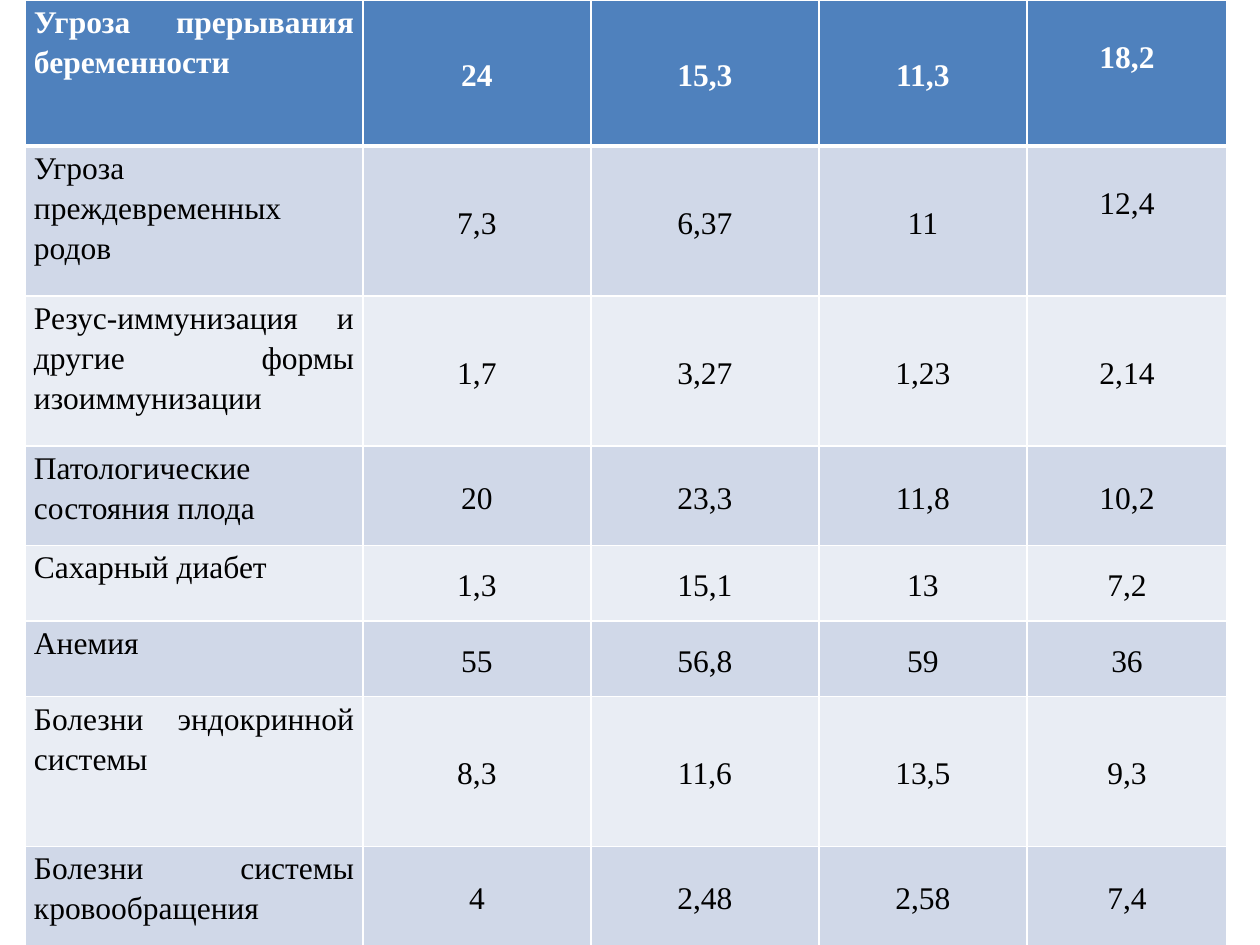
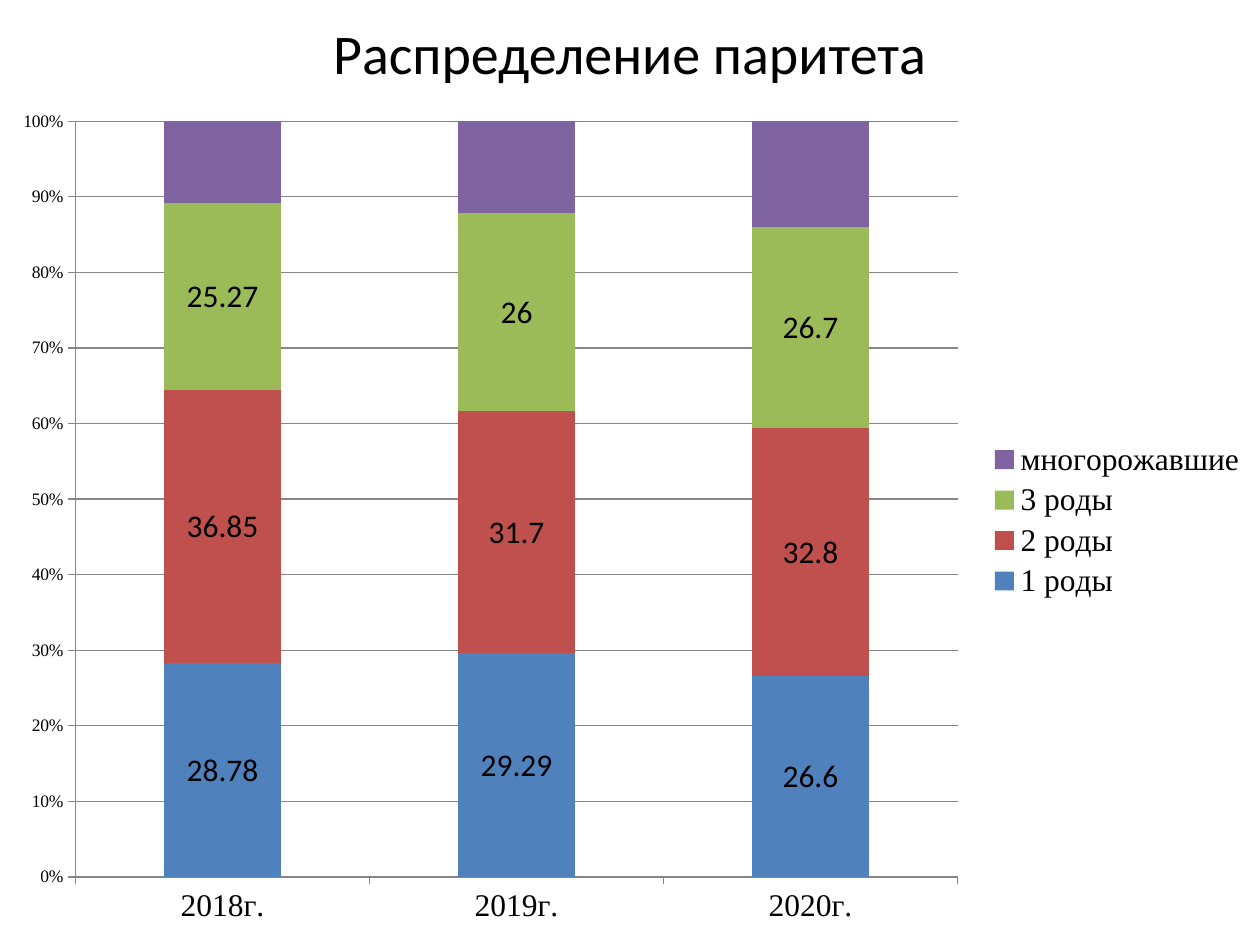
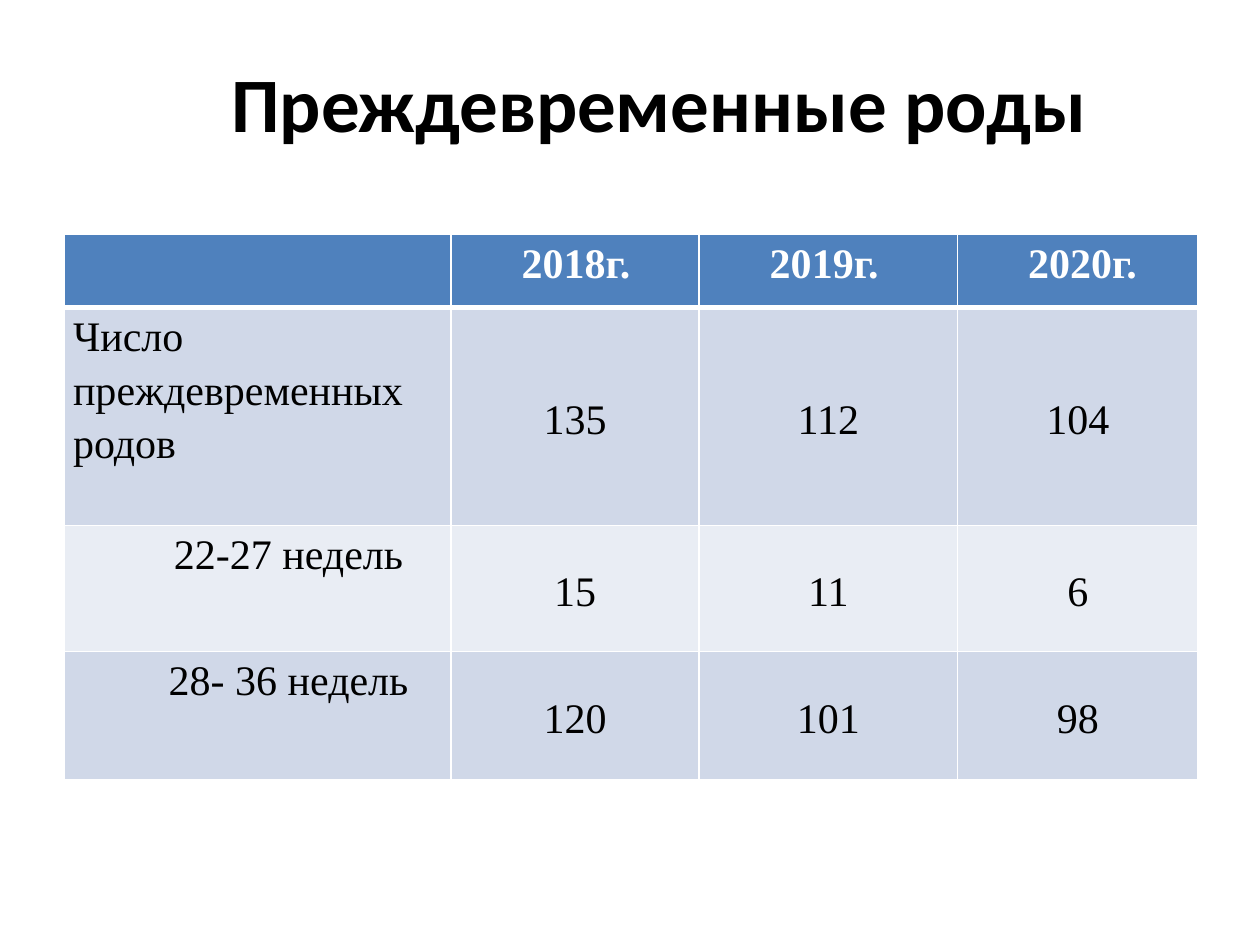
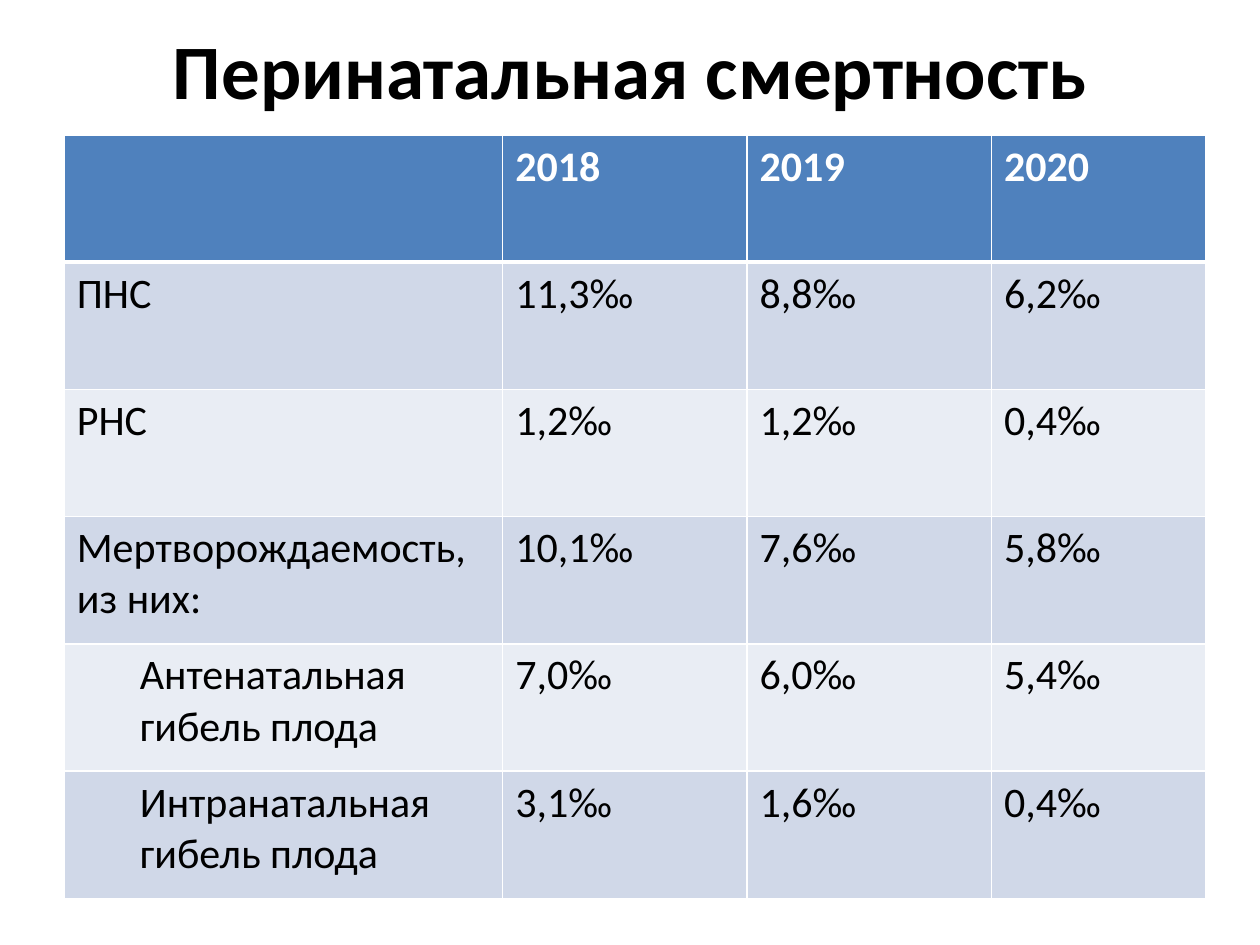
from lxml import etree
from pptx import Presentation
from pptx import util as u
from pptx.chart import data as cd
from pptx.dml.color import RGBColor
from pptx.enum import chart as ec, text as et
from pptx.oxml.ns import qn

Pt = u.Pt
SANS, SERIF = "Calibri", "Times New Roman"
WHITE, BLACK, GREY = "FFFFFF", "000000", "868686"
HEAD, BANDS = "4F81BD", ("D0D8E8", "E9EDF4")
HUES = ("4F81BD", "C0504D", "9BBB59", "8064A2")
LEFT, MID, JUST = et.PP_ALIGN.LEFT, et.PP_ALIGN.CENTER, et.PP_ALIGN.JUSTIFY
TOP, CORE = et.MSO_ANCHOR.TOP, et.MSO_ANCHOR.MIDDLE
FIRST = 35.28  # first-line indent of the serif tables


def hue(code):
    return RGBColor.from_string(code)


def style(font, face, size, code=BLACK, bold=False):
    font.name, font.size, font.bold = face, Pt(size), bold
    font.color.rgb = hue(code)


def title(slide, box, words, size=44, bold=True, foot=3.6):
    frame = slide.shapes.add_textbox(*map(Pt, box)).text_frame
    frame.word_wrap = True
    frame.vertical_anchor = CORE
    frame.margin_bottom = Pt(foot)
    frame.text = words
    line = frame.paragraphs[0]
    line.alignment = MID
    style(line.runs[0].font, SANS, size, bold=bold)


# Tables
def edge(cell, row):
    """White rules, with a heavy one under the header row."""
    props = cell._tc.get_or_add_tcPr()
    wide = {"lnT": row == 1, "lnB": row == 0}
    for side in ("lnL", "lnR", "lnT", "lnB"):
        rule = etree.SubElement(props, qn("a:" + side),
                                w=str(Pt(3 if wide.get(side) else 1)))
        fill = etree.SubElement(rule, qn("a:solidFill"))
        etree.SubElement(fill, qn("a:srgbClr"), val=WHITE)


def indent(cell, left=0, first=0):
    props = cell.text_frame.paragraphs[0]._p.get_or_add_pPr()
    props.set("marL", str(Pt(left)))
    props.set("indent", str(Pt(first)))


def place(cell, align, anchor=TOP):
    cell.vertical_anchor = anchor
    cell.text_frame.paragraphs[0].alignment = align


def grid(slide, spot, cols, rows, data, face, size):
    shape = slide.shapes.add_table(len(rows), len(cols), *map(
        Pt, (*spot, sum(cols), sum(rows))))
    table = shape.table
    table.horz_banding = False
    for col, width in zip(table.columns, cols):
        col.width = Pt(width)
    for r, (row, height) in enumerate(zip(table.rows, rows)):
        row.height = Pt(height)
        for cell, words in zip(row.cells, data[r]):
            edge(cell, r)
            cell.fill.solid()
            cell.fill.fore_color.rgb = hue(BANDS[(r - 1) % 2] if r else HEAD)
            cell.text_frame.text = words
            for run in cell.text_frame.paragraphs[0].runs:
                style(run.font, face, size, BLACK if r else WHITE, not r)
    return table


def tight(table, label):
    """Narrow insets, loose lines, centred figures beside the labels."""
    for row in table.rows:
        for c, cell in enumerate(row.cells):
            cell.margin_left = cell.margin_right = Pt(5.04)
            cell.margin_top = cell.margin_bottom = 0
            cell.text_frame.paragraphs[0].line_spacing = 1.15
            place(cell, *((MID, CORE) if c else (label, TOP)))


# Slide 1: complications
def risks(slide):
    data = [
        ("Угроза прерывания беременности", "24", "15,3", "11,3", "18,2"),
        ("Угроза преждевременных родов", "7,3", "6,37", "11", "12,4"),
        ("Резус-иммунизация и другие формы изоиммунизации",
         "1,7", "3,27", "1,23", "2,14"),
        ("Патологические состояния плода", "20", "23,3", "11,8", "10,2"),
        ("Сахарный диабет", "1,3", "15,1", "13", "7,2"),
        ("Анемия", "55", "56,8", "59", "36"),
        ("Болезни эндокринной системы", "8,3", "11,6", "13,5", "9,3"),
        ("Болезни системы кровообращения", "4", "2,48", "2,58", "7,4"),
    ]
    tall, mean, low = 85.68, 56.88, 43.2
    table = grid(slide, (14.4, 0), (192.96, 130.32, 130.32, 118.8, 114.48),
                 (83.52, tall, tall, mean, low, low, tall, mean),
                 data, SERIF, 18)
    tight(table, JUST)
    # The last figure of the first two rows sits one line down
    for r in range(2):
        cell = table.cell(r, 4)
        place(cell, MID)
        cell.margin_top = Pt(20)


# Slide 2: parity chart
def frame_plot(chart, box):
    area = chart.element.find(".//" + qn("c:plotArea"))
    for old in area.findall(qn("c:layout")):
        area.remove(old)
    layout = etree.Element(qn("c:layout"))
    area.insert(0, layout)
    manual = etree.SubElement(layout, qn("c:manualLayout"))
    pairs = [("layoutTarget", "inner"), ("xMode", "edge"), ("yMode", "edge"),
             *zip("xywh", box)]
    for tag, val in pairs:
        etree.SubElement(manual, qn("c:" + tag), val=str(val))


def births(slide):
    title(slide, (36, 21.6, 648, 49.68), "Распределение паритета",
          32, False, foot=37)
    data = cd.CategoryChartData()
    data.categories = ["2018г.", "2019г.", "2020г."]
    data.add_series("1 роды", (28.78, 29.29, 26.6))
    data.add_series("2 роды", (36.85, 31.7, 32.8))
    data.add_series("3 роды", (25.27, 26, 26.7))
    data.add_series("многорожавшие", (11, 12, 14))
    chart = slide.shapes.add_chart(
        ec.XL_CHART_TYPE.COLUMN_STACKED_100,
        *map(Pt, (0, 54.72, 720, 485.28)), data).chart
    style(chart.font, SANS, 10)
    chart.has_title = False
    frame_plot(chart, (0.06, 0.03, 0.7, 0.89))

    # Columns and their values
    plot = chart.plots[0]
    plot.vary_by_categories = False
    plot.overlap, plot.gap_width = 100, 150
    for i, (part, code) in enumerate(zip(plot.series, HUES)):
        part.format.fill.solid()
        part.format.fill.fore_color.rgb = hue(code)
        if i < 3:
            part.data_labels.show_value = True
            style(part.data_labels.font, SANS, 18)

    # Axes and legend
    for axis, size in ((chart.category_axis, 18), (chart.value_axis, 10)):
        style(axis.tick_labels.font, SERIF, size)
        axis.major_tick_mark = ec.XL_TICK_MARK.OUTSIDE
        axis.format.line.color.rgb = hue(GREY)
    axis = chart.value_axis
    axis.has_major_gridlines = True
    axis.major_gridlines.format.line.color.rgb = hue(GREY)
    axis.tick_labels.number_format = "0%"
    axis.tick_labels.number_format_is_linked = False
    chart.has_legend = True
    chart.legend.position = ec.XL_LEGEND_POSITION.RIGHT
    chart.legend.include_in_layout = False
    style(chart.legend.font, SERIF, 18)


# Slide 3: preterm births
def preterm(slide):
    title(slide, (87.84, 21.6, 578.16, 72.72), "Преждевременные роды")
    data = [
        ("", "2018г.", "2019г.", "2020г."),
        ("Число преждевременных родов", "135", "112", "104"),
        ("22-27 недель", "15", "11", "6"),
        ("28- 36 недель", "120", "101", "98"),
    ]
    table = grid(slide, (36.72, 133.92), (221.04, 141.84, 147.6, 137.52),
                 (41.76, 124.56, 72, 73.44), data, SERIF, 24)
    tight(table, LEFT)
    for c in range(1, 4):
        place(table.cell(0, c), LEFT)
        indent(table.cell(0, c), first=FIRST)
    for r in (2, 3):
        place(table.cell(r, 0), MID)
        indent(table.cell(r, 0), first=FIRST)


# Slide 4: perinatal losses
def losses(slide):
    title(slide, (36.72, 0, 647.28, 78.48), "Перинатальная смертность")
    data = [
        ("", "2018", "2019", "2020"),
        ("ПНС", "11,3‰", "8,8‰", "6,2‰"),
        ("РНС", "1,2‰", "1,2‰", "0,4‰"),
        ("Мертворождаемость, из них:", "10,1‰", "7,6‰", "5,8‰"),
        ("Антенатальная гибель плода", "7,0‰", "6,0‰", "5,4‰"),
        ("Интранатальная гибель плода", "3,1‰", "1,6‰", "0,4‰"),
    ]
    table = grid(slide, (36.72, 77.04), (250.56, 139.68, 139.68, 122.4),
                 [72.72] * len(data), data, SANS, 24)
    for r in (4, 5):
        cell = table.cell(r, 0)
        cell.text_frame.paragraphs[0].level = 1
        indent(cell, left=36)


def main():
    deck = Presentation()
    deck.slide_width, deck.slide_height = Pt(720), Pt(540)
    for build in (risks, births, preterm, losses):
        build(deck.slides.add_slide(deck.slide_layouts[6]))
    deck.save("out.pptx")


if __name__ == "__main__":
    main()
